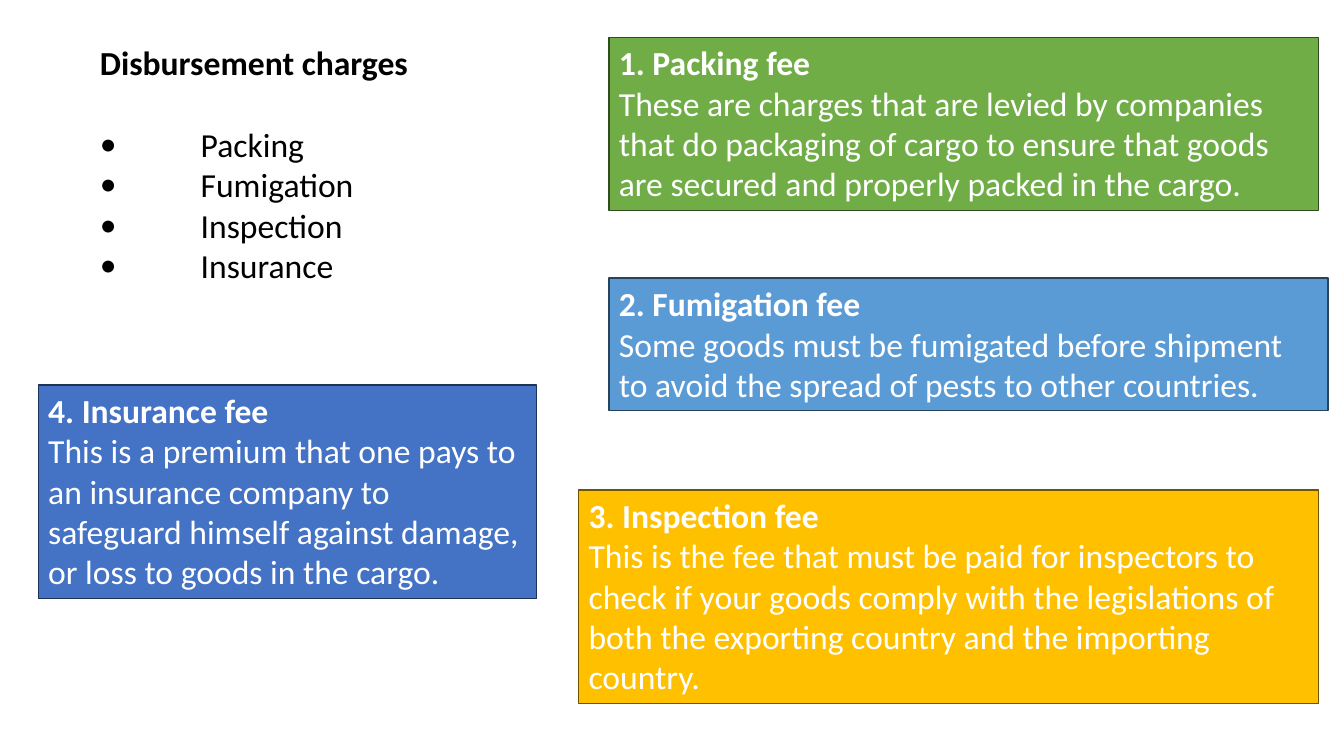
from pptx import Presentation, util as u
from pptx.dml.color import RGBColor
from pptx.enum import shapes, text
from pptx.oxml.ns import qn
from lxml import etree

WIDTH, HEIGHT = u.Inches(13.33), u.Inches(7.5)
FONT, SIZE = "Calibri", u.Pt(24)
LINE_ROWS = 5.39  # height of one text line, in percent of the slide
INSET_ROWS = 1.33  # top and bottom insets together

LIST_LEFT, LIST_WIDTH, TOP = 6.68, 34.06, 4.93
CHARGES = ["Packing", "Fumigation", "Inspection", "Insurance"]

# left, top, width, text lines, fill, outline, heading, explanation
FEES = [
    (45.31, TOP, 52.81, 4, "70AD47", "314C1F", "1. Packing fee",
     "These are charges that are levied by companies that do packaging of "
     "cargo to ensure that goods are secured and properly packed in the cargo."),
    (45.31, 36.8, 53.49, 3, "5B9BD5", "28445D", "2. Fumigation fee",
     "Some goods must be fumigated before shipment to avoid the spread of "
     "pests to other countries."),
    (43.06, 64.8, 55.06, 5, "FFC000", "705400", "3. Inspection fee",
     "This is the fee that must be paid for inspectors to check if your goods "
     "comply with the legislations of both the exporting country and the "
     "importing country."),
    (2.85, 50.93, 37.06, 5, "4472C4", "1E3256", "4. Insurance fee",
     "This is a premium that one pays to an insurance company to safeguard "
     "himself against damage, or loss to goods in the cargo."),
]


def color(target, value):
    target.rgb = RGBColor.from_string(value)


def box(left, top, width, lines):
    """Turn percent of the slide and a line count into a rectangle."""
    height = INSET_ROWS + LINE_ROWS * lines
    return (int(WIDTH * left / 100), int(HEIGHT * top / 100),
            int(WIDTH * width / 100), int(HEIGHT * height / 100))


def place(shape, area):
    shape.left, shape.top, shape.width, shape.height = area


def write(shape, lines, ink):
    """Write one paragraph per (wording, bold) pair, top left."""
    frame = shape.text_frame
    frame.word_wrap = True
    frame.auto_size = text.MSO_AUTO_SIZE.NONE
    frame.vertical_anchor = text.MSO_ANCHOR.TOP
    for index, (wording, bold) in enumerate(lines):
        paragraph = frame.add_paragraph() if index else frame.paragraphs[0]
        paragraph.alignment = text.PP_ALIGN.LEFT
        paragraph.space_before = u.Pt(0)
        run = paragraph.add_run()
        run.text = wording
        run.font.name, run.font.size, run.font.bold = FONT, SIZE, bold
        color(run.font.color, ink)


def add_bullets(shape):
    for paragraph in shape.text_frame.paragraphs:
        properties = paragraph._p.get_or_add_pPr()
        properties.set("marL", str(u.Inches(1)))
        properties.set("indent", str(-u.Inches(1)))
        etree.SubElement(properties, qn("a:buFont")).set("typeface", FONT)
        etree.SubElement(properties, qn("a:buChar")).set("char", "•")


def add_fee(slide, left, top, width, lines, fill, outline, heading, explanation):
    shape = slide.shapes.add_shape(shapes.MSO_SHAPE.RECTANGLE,
                                   *box(left, top, width, lines))
    shape.shadow.inherit = False
    shape.fill.solid()
    color(shape.fill.fore_color, fill)
    color(shape.line.color, outline)
    shape.line.width = u.Pt(1)
    write(shape, [(heading, True), (explanation, False)], "FFFFFF")


def main():
    presentation = Presentation()
    presentation.slide_width, presentation.slide_height = WIDTH, HEIGHT
    slide = presentation.slides.add_slide(presentation.slide_layouts[1])

    title, body = slide.placeholders
    place(title, box(LIST_LEFT, TOP, LIST_WIDTH, 1))
    write(title, [("Disbursement charges", True)], "000000")
    place(body, box(LIST_LEFT, TOP + 2 * LINE_ROWS, LIST_WIDTH, len(CHARGES)))
    write(body, [(charge, False) for charge in CHARGES], "000000")
    add_bullets(body)

    for fee in FEES:
        add_fee(slide, *fee)
    presentation.save("out.pptx")


if __name__ == "__main__":
    main()
